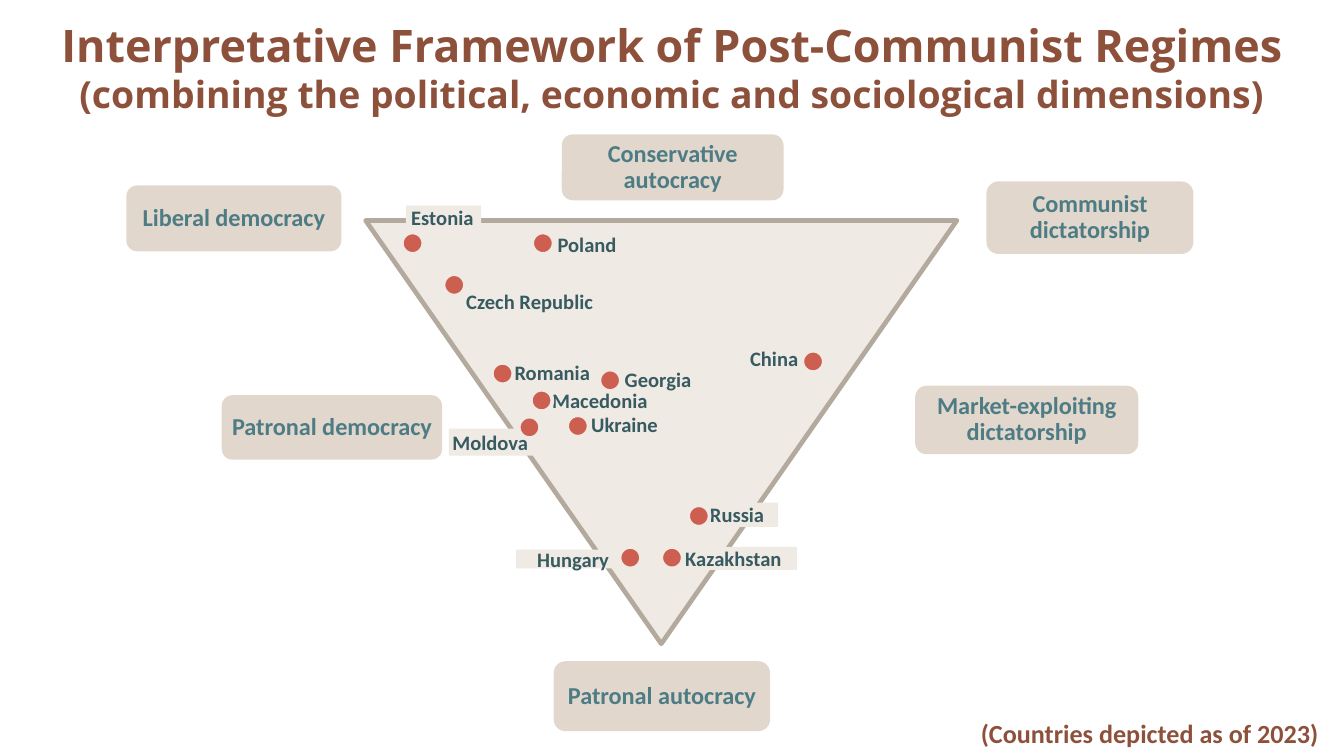
from lxml import etree
from pptx import Presentation
from pptx import util as u
from pptx.dml.color import RGBColor
from pptx.enum import shapes, text
from pptx.oxml import ns

PX = 9144  # EMU per px, 100 px to the inch
BROWN = RGBColor(0x8D, 0x50, 0x3B)
TAN = RGBColor(0xC7, 0xB0, 0x9A)
CREAM = RGBColor(0xEF, 0xEA, 0xE4)
TAUPE = RGBColor(0xB3, 0xA9, 0x9D)
RED = RGBColor(0xCD, 0x5F, 0x50)
TEAL = RGBColor(0x4D, 0x7C, 0x85)
DARK = RGBColor(0x38, 0x5A, 0x61)
KIND = shapes.MSO_SHAPE
LEFT, MID, RIGHT = text.PP_ALIGN.LEFT, text.PP_ALIGN.CENTER, text.PP_ALIGN.RIGHT

REGIMES = [
    ("Communist dictatorship", (734, 135, 154, 54)),
    ("Liberal democracy", (94, 138, 160, 49)),
    ("Patronal autocracy", (412, 492, 161, 52)),
    ("Conservative autocracy", (418, 100, 165, 49)),
    ("Market-exploiting dictatorship", (681, 287, 166, 51)),
    ("Patronal democracy", (165, 294, 164, 48)),
]

# name, dot corner, label box, alignment, side insets, filled label
LANDS = [
    ("China", (597, 261), (547, 259, 58, 16), MID, (10, 10), False),
    ("Poland", (396, 173), (405, 173, 71, 17), LEFT, (10, 10), False),
    ("Estonia", (299, 173), (302, 153, 56, 18), LEFT, (4, 4), True),
    ("Romania", (366, 270), (373, 271, 78, 12), LEFT, (10, 10), False),
    ("Macedonia", (395, 290), (401, 285, 93, 25), LEFT, (10, 10), False),
    ("Georgia", (446, 275), (455, 275, 73, 14), LEFT, (10, 10), False),
    ("Ukraine", (422, 309), (430, 304, 74, 24), LEFT, (10, 10), False),
    ("Hungary", (461, 407), (384, 409, 79, 14), RIGHT, (10, 10), True),
    ("Russia", (512, 376), (518, 374, 61, 18), MID, (10, 10), True),
    ("Kazakhstan", (492, 407), (500, 407, 93, 17), LEFT, (10, 10), True),
    ("Czech Republic", (330, 204), (337, 212, 118, 24), LEFT, (10, 10), False),
    ("Moldova", (386, 310), (334, 319, 63, 20), RIGHT, (0, 4), True),
]


class Deck:
    face = "Calibri"

    def __init__(self, wide):
        """Start a 16:9 deck with one blank slide."""
        self.prs = Presentation()
        self.prs.slide_width = wide * PX
        self.prs.slide_height = wide * PX * 9 // 16
        self.slide = self.prs.slides.add_slide(self.prs.slide_layouts[6])

    def shape(self, kind, box, fill, line=None, width=0):
        item = self.slide.shapes.add_shape(kind, *(n * PX for n in box))
        item.shadow.inherit = False
        item.fill.solid()
        item.fill.fore_color.rgb = fill
        if line is None:
            item.line.fill.background()
        else:
            item.line.color.rgb = line
            item.line.width = u.Pt(width)
        return item

    def frame(self, item, align, sides=(10, 10), top=False):
        """Prepare the text frame of an item and return its paragraph."""
        tf = item.text_frame
        tf.word_wrap = True
        tf.margin_left, tf.margin_right = (n * PX for n in sides)
        tf.margin_top = tf.margin_bottom = 5 * PX
        anchor = text.MSO_ANCHOR
        tf.vertical_anchor = anchor.TOP if top else anchor.MIDDLE
        para = tf.paragraphs[0]
        para.alignment = align
        return para

    def run(self, para, words, size, color, face=None):
        run = para.add_run()
        run.text = words
        font = run.font
        font.name, font.size, font.bold = face or self.face, u.Pt(size), True
        font.color.rgb = color

    def box(self, area):
        return self.slide.shapes.add_textbox(*(n * PX for n in area))

    def cone(self, area):
        """Draw the triangle pointing down, with round corners."""
        item = self.shape(KIND.ISOSCELES_TRIANGLE, area, CREAM, TAUPE, 2.5)
        item.rotation = 180
        etree.SubElement(item.line._get_or_add_ln(), ns.qn("a:round"))

    def regime(self, name, area):
        item = self.shape(KIND.ROUNDED_RECTANGLE, area, TAN)
        tint = item.fill._xPr.find(".//" + ns.qn("a:srgbClr"))
        etree.SubElement(tint, ns.qn("a:alpha"), val="50000")
        para = self.frame(item, MID, (5, 5))
        para.line_spacing = 0.9
        self.run(para, name, 13, TEAL)

    def label(self, name, area, align, sides, solid):
        item = self.shape(KIND.RECTANGLE, area, CREAM) if solid else self.box(area)
        self.run(self.frame(item, align, sides), name, 11, DARK)

    def dot(self, left, top):
        self.shape(KIND.OVAL, (left, top, 16, 16), RED, CREAM, 2)

    def title(self, area, head, sub):
        para = self.frame(self.box(area), MID)
        self.run(para, head, 24, BROWN, "Open Sans")
        para.add_line_break()
        self.run(para, sub, 20, BROWN, "Open Sans")

    def note(self, area, words):
        para = self.frame(self.box(area), LEFT, top=True)
        self.run(para, words, 14, BROWN)


def main():
    deck = Deck(1000)
    deck.cone((272, 164, 440, 315))
    for name, area in REGIMES:
        deck.regime(name, area)
    deck.title((12, 0, 976, 100),
               "Interpretative Framework of Post-Communist Regimes",
               "(combining the political, economic and sociological dimensions)")
    deck.note((720, 529, 280, 34), "(Countries depicted as of 2023)")
    for name, _, *rest in LANDS:
        deck.label(name, *rest)
    for _, spot, *_ in LANDS:
        deck.dot(*spot)
    deck.prs.save("out.pptx")


if __name__ == "__main__":
    main()
